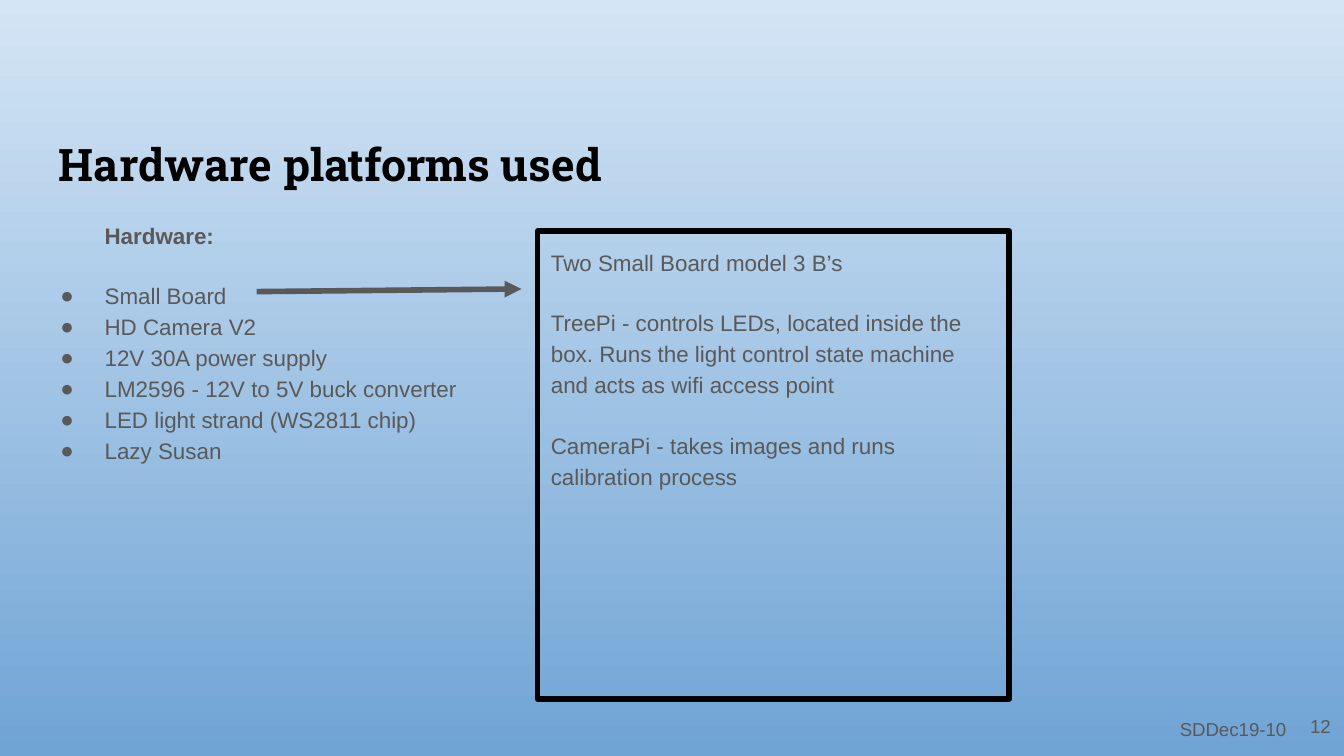
from lxml import etree
from pptx import Presentation
from pptx.dml.color import RGBColor
from pptx.enum.shapes import MSO_CONNECTOR, MSO_SHAPE
from pptx.enum.text import MSO_ANCHOR, PP_ALIGN
from pptx.oxml.ns import qn
from pptx.util import Inches, Pt

STRAIGHT = MSO_CONNECTOR.STRAIGHT
RECTANGLE = MSO_SHAPE.RECTANGLE
TOP, MIDDLE, BOTTOM = MSO_ANCHOR.TOP, MSO_ANCHOR.MIDDLE, MSO_ANCHOR.BOTTOM
LEFT, RIGHT = PP_ALIGN.LEFT, PP_ALIGN.RIGHT

COLORS = {"sky": "D4E5F5", "blue": "70A4D5", "black": "000000", "gray": "595959"}
TITLE = "Hardware platforms used"
HEADING = "Hardware:"
HARDWARE = [
    "Small Board",
    "HD Camera V2",
    "12V 30A power supply",
    "LM2596 - 12V to 5V buck converter",
    "LED light strand (WS2811 chip)",
    "Lazy Susan",
]
DETAILS = [
    "Two Small Board model 3 B’s",
    "TreePi - controls LEDs, located inside the box. Runs the light control "
    "state machine and acts as wifi access point",
    "CameraPi - takes images and runs calibration process",
]
PAGE_NUMBER = "12"
PROJECT = "SDDec19-10"
PARAGRAPH_GAP = 16
LINE_WIDTH = Pt(3)


def color(name):
    return RGBColor.from_string(COLORS[name])


def prepare_frame(shape, anchor=TOP):
    frame = shape.text_frame
    frame.word_wrap = True
    frame.vertical_anchor = anchor
    frame.margin_left = frame.margin_right = Inches(0.1)
    frame.margin_top = frame.margin_bottom = Inches(0.1)
    return frame


def add_text_box(slide, left, top, width, height, anchor=TOP):
    box = slide.shapes.add_textbox(*map(Inches, (left, top, width, height)))
    return prepare_frame(box, anchor)


def add_bullet(properties, size, font):
    bullet_color = etree.SubElement(properties, qn("a:buClr"))
    etree.SubElement(bullet_color, qn("a:srgbClr"), val=COLORS["gray"])
    etree.SubElement(properties, qn("a:buSzPts"), val=str(size * 100))
    etree.SubElement(properties, qn("a:buFont"), typeface=font)
    etree.SubElement(properties, qn("a:buChar"), char="●")


def write(frame, text, size=12, font="Arial", fill="gray", bold=False, align=LEFT,
          spacing=1.0, before=0, margin=0, indent=0, bullet=False):
    first = frame.paragraphs[0]
    paragraph = frame.add_paragraph() if first.runs else first
    paragraph.alignment = align
    paragraph.line_spacing = spacing
    paragraph.space_before = Pt(before)
    properties = paragraph._p.get_or_add_pPr()
    properties.set("marL", str(Inches(margin)))
    properties.set("indent", str(Inches(indent)))
    if bullet:
        add_bullet(properties, size, font)
    run = paragraph.add_run()
    run.text = text
    run.font.size, run.font.name, run.font.bold = Pt(size), font, bold
    run.font.color.rgb = color(fill)
    return paragraph


def add_background(slide):
    fill = slide.background.fill
    fill.gradient()
    fill.gradient_angle = 270
    for stop, name in zip(fill.gradient_stops, ("sky", "blue")):
        stop.color.rgb = color(name)


def add_hardware_list(slide):
    frame = add_text_box(slide, 0.18, 1.52, 3.51, 3.85)
    write(frame, HEADING, bold=True, spacing=1.15, margin=0.5)
    for index, item in enumerate(HARDWARE):
        write(frame, item, spacing=1.15, before=0 if index else PARAGRAPH_GAP,
              margin=0.5, indent=-0.33, bullet=True)


def add_arrow(slide):
    arrow = slide.shapes.add_connector(STRAIGHT, *map(Inches, (1.91, 2.17, 3.88, 2.15)))
    arrow.line.color.rgb = color("gray")
    arrow.line.width = LINE_WIDTH
    etree.SubElement(arrow.line._get_or_add_ln(), qn("a:tailEnd"), type="triangle")
    etree.SubElement(arrow._element.spPr, qn("a:effectLst"))


def add_details(slide):
    panel = slide.shapes.add_shape(RECTANGLE, *map(Inches, (4, 1.72, 3.51, 3.48)))
    panel.shadow.inherit = False
    panel.fill.background()
    panel.line.color.rgb = color("black")
    panel.line.width = LINE_WIDTH
    frame = prepare_frame(panel)
    for index, text in enumerate(DETAILS):
        paragraph = write(frame, text, spacing=1.15, before=PARAGRAPH_GAP if index else 0)
    paragraph.space_after = Pt(PARAGRAPH_GAP)


def main():
    presentation = Presentation()
    presentation.slide_width = Inches(10)
    presentation.slide_height = presentation.slide_width * 9 // 16
    slide = presentation.slides.add_slide(presentation.slide_layouts[6])
    add_background(slide)
    title = add_text_box(slide, 0.34, 0.69, 7.69, 0.83, BOTTOM)
    write(title, TITLE, size=24, font="Roboto Slab", fill="black", bold=True)
    add_hardware_list(slide)
    add_arrow(slide)
    add_details(slide)
    number = add_text_box(slide, 8.92, 5.19, 1.08, 0.43, MIDDLE)
    write(number, PAGE_NUMBER, size=10, align=RIGHT)
    project = add_text_box(slide, 8.68, 5.26, 1.03, 0.32)
    write(project, PROJECT, size=10)
    presentation.save("out.pptx")


if __name__ == "__main__":
    main()
